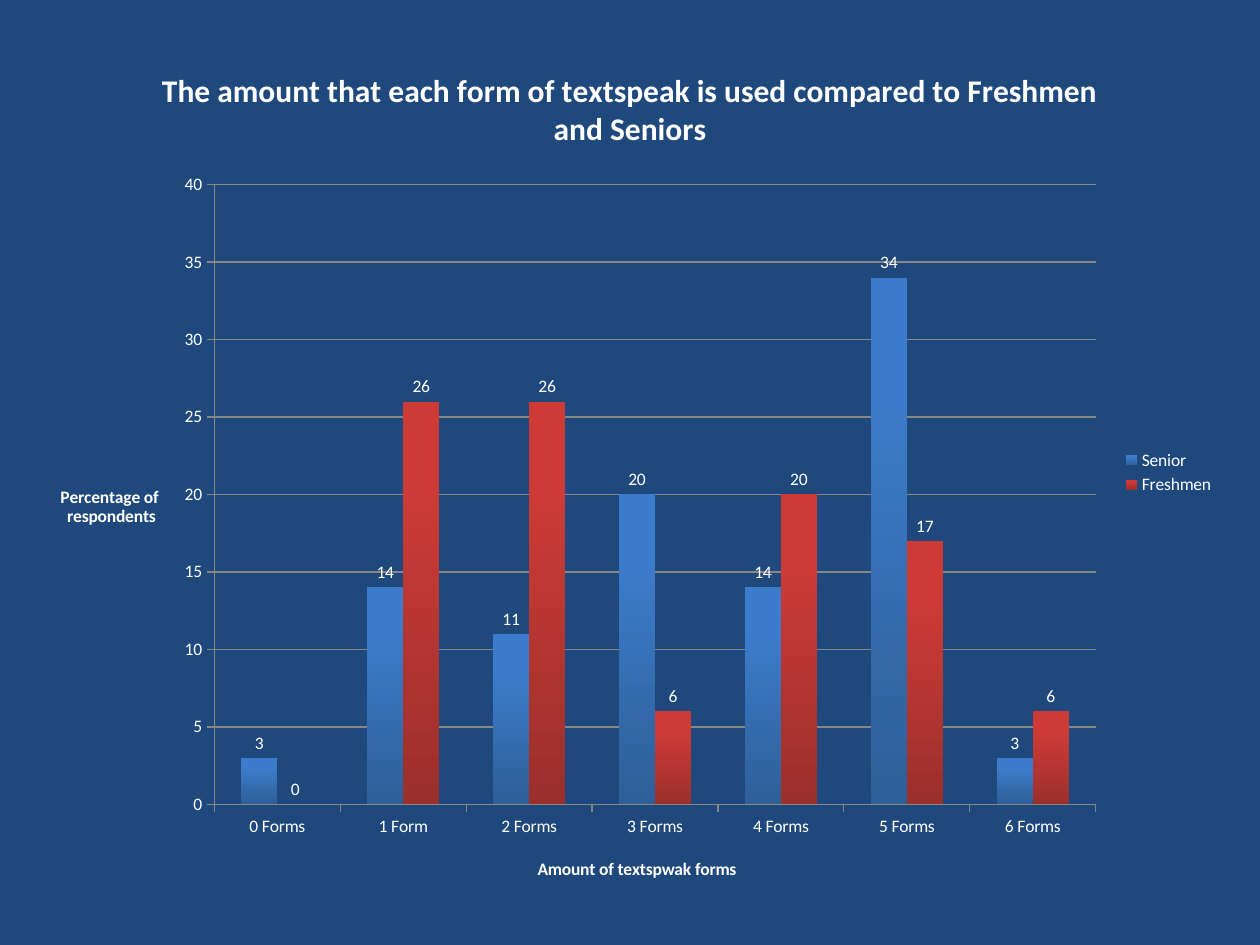
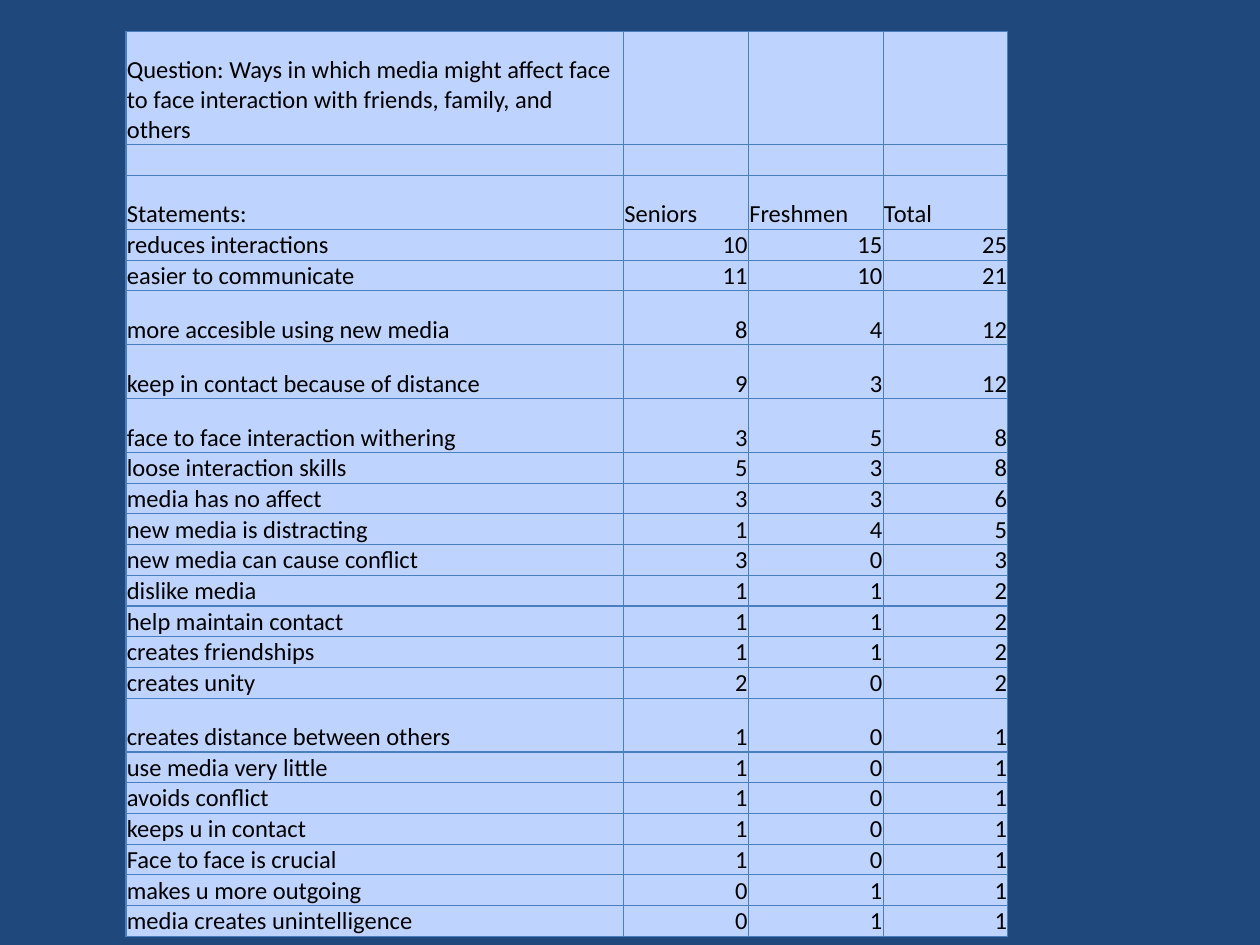
import pptx
import pptx.chart.data
import pptx.dml.color
import pptx.enum.chart
import pptx.enum.text
import pptx.oxml
import pptx.oxml.ns
import pptx.util

Pt = pptx.util.Pt
ALIGN = pptx.enum.text.PP_ALIGN
FONT = "Calibri"
NAVY, WHITE, BLACK = "1F497D", "FFFFFF", "000000"
PALE_BLUE, BORDER, GRID = "BFD3FF", "4B7EBC", "878787"

FORMS = ["0 Forms", "1 Form", "2 Forms", "3 Forms", "4 Forms", "5 Forms", "6 Forms"]
USAGE = [
    ("Senior", (3, 14, 11, 20, 14, 34, 3), "2E5F97", "3D7CCC"),
    ("Freshmen", (0, 26, 26, 6, 20, 17, 6), "9B2F2C", "CE3B37"),
]

QUESTION = ("Question: Ways in which media might affect face to face "
            "interaction with friends, family, and others")
STATEMENTS = [
    ("reduces interactions", 10, 15),
    ("easier to communicate", 11, 10),
    ("more accesible using new media", 8, 4),
    ("keep in contact because of distance", 9, 3),
    ("face to face interaction withering", 3, 5),
    ("loose interaction skills", 5, 3),
    ("media has no affect", 3, 3),
    ("new media is distracting", 1, 4),
    ("new media can cause conflict", 3, 0),
    ("dislike media", 1, 1),
    ("help maintain contact", 1, 1),
    ("creates friendships", 1, 1),
    ("creates unity", 2, 0),
    ("creates distance between others", 1, 0),
    ("use media very little", 1, 0),
    ("avoids conflict", 1, 0),
    ("keeps u in contact", 1, 0),
    ("Face to face is crucial", 1, 0),
    ("makes u more outgoing", 0, 1),
    ("media creates unintelligence", 0, 1),
]
COLUMN_WIDTHS = (284.4, 71.3, 77, 71.3)
QUESTION_HEIGHT, TALL_HEIGHT, LINE_HEIGHT = 64.8, 30.8, 17.5
TALL_ROWS = {2, 5, 6, 7, 16}


def color(value):
    return pptx.dml.color.RGBColor.from_string(value)


def write(frame, text, size=10, bold=False, fill=WHITE, align=None):
    for index, line in enumerate(text.split("\n")):
        paragraph = frame.add_paragraph() if index else frame.paragraphs[0]
        paragraph.alignment = align
        if not line:
            paragraph._p.get_or_add_endParaRPr().set("sz", str(size * 100))
            continue
        run = paragraph.add_run()
        run.text = line
        run.font.name = FONT
        run.font.size = Pt(size)
        run.font.bold = bold
        run.font.color.rgb = color(fill)


def add_slide(deck):
    slide = deck.slides.add_slide(deck.slide_layouts[6])
    slide.background.fill.solid()
    slide.background.fill.fore_color.rgb = color(NAVY)
    return slide


def place(element, inner=False, **fractions):
    for layout in element.findall(pptx.oxml.ns.qn("c:layout")):
        element.remove(layout)
    target = '<c:layoutTarget val="inner"/>' if inner else ""
    modes = "".join(f'<c:{key}Mode val="edge"/>' for key in "xy")
    values = "".join(f'<c:{key} val="{value}"/>' for key, value in fractions.items())
    layout = pptx.oxml.parse_xml(
        f'<c:layout {pptx.oxml.ns.nsdecls("c")}><c:manualLayout>'
        f"{target}{modes}{values}</c:manualLayout></c:layout>")
    text = element.find(pptx.oxml.ns.qn("c:tx"))
    element.insert(0 if text is None else 1, layout)


def style_axis(axis, title, x, y):
    axis.major_tick_mark = pptx.enum.chart.XL_TICK_MARK.OUTSIDE
    axis.minor_tick_mark = pptx.enum.chart.XL_TICK_MARK.NONE
    axis.format.line.color.rgb = color(GRID)
    axis.format.line.width = Pt(0.75)
    write(axis.axis_title.text_frame, title, bold=True, align=ALIGN.CENTER)
    place(axis.axis_title._element, x=x, y=y)


def style_series(series, dark, light):
    fill = series.format.fill
    fill.gradient()
    fill.gradient_angle = 90
    for stop, shade, position in zip(fill.gradient_stops, (dark, light), (0, 0.8)):
        stop.color.rgb = color(shade)
        stop.position = position
    labels = series.data_labels
    labels.show_value = True
    labels.position = pptx.enum.chart.XL_LABEL_POSITION.OUTSIDE_END
    labels.font.size = Pt(10)
    labels.font.name = FONT
    labels.font.color.rgb = color(WHITE)


def add_usage_chart(slide):
    data = pptx.chart.data.CategoryChartData()
    data.categories = FORMS
    for name, values, *_ in USAGE:
        data.add_series(name, values)
    chart = slide.shapes.add_chart(
        pptx.enum.chart.XL_CHART_TYPE.COLUMN_CLUSTERED,
        Pt(18.75), Pt(22.3), Pt(682.5), Pt(495.4), data).chart
    chart.font.name = FONT
    chart.font.size = Pt(10)
    chart.font.color.rgb = color(WHITE)
    write(chart.chart_title.text_frame,
          "The amount that each form of textspeak is used compared to Freshmen and Seniors",
          size=18, bold=True, align=ALIGN.CENTER)
    chart.chart_title.include_text_in_layout = False
    chart.has_legend = True
    chart.legend.position = pptx.enum.chart.XL_LEGEND_POSITION.RIGHT
    chart.legend.include_in_layout = False

    style_axis(chart.category_axis, "Amount of textspwak forms", 0.42, 0.94)
    percentage = chart.value_axis
    style_axis(percentage, "Percentage of\n respondents", 0.02, 0.51)
    percentage.axis_title.text_frame._txBody.bodyPr.set("rot", "0")
    percentage.axis_title.text_frame._txBody.bodyPr.set("vert", "horz")
    percentage.minimum_scale, percentage.maximum_scale = 0, 40
    percentage.major_unit = 5
    percentage.major_gridlines.format.line.color.rgb = color(GRID)
    percentage.major_gridlines.format.line.width = Pt(0.75)

    columns = chart.plots[0]
    columns.gap_width, columns.overlap = 150, 0
    columns.vary_by_categories = False
    for series, (_, _, dark, light) in zip(columns.series, USAGE):
        style_series(series, dark, light)
    plot_area = chart._chartSpace.chart.plotArea
    place(plot_area, inner=True, x=0.152, y=0.168, w=0.738, h=0.715)


def style_cell(cell):
    cell.fill.solid()
    cell.fill.fore_color.rgb = color(PALE_BLUE)
    cell.margin_left = cell.margin_right = cell.margin_top = Pt(0.5)
    cell.margin_bottom = 0
    cell.vertical_anchor = pptx.enum.text.MSO_ANCHOR.BOTTOM
    for index, side in enumerate("LRTB"):
        cell._tc.get_or_add_tcPr().insert(index, pptx.oxml.parse_xml(
            f'<a:ln{side} {pptx.oxml.ns.nsdecls("a")} w="{Pt(0.75)}"><a:solidFill>'
            f'<a:srgbClr val="{BORDER}"/></a:solidFill></a:ln{side}>'))


def add_statement_table(slide):
    rows = [(QUESTION, "", "", ""), ("",) * 4,
            ("Statements:", "Seniors", "Freshmen", "Total")]
    rows += [(statement, seniors, freshmen, seniors + freshmen)
             for statement, seniors, freshmen in STATEMENTS]
    heights = [TALL_HEIGHT if index in TALL_ROWS else LINE_HEIGHT
               for index in range(len(rows))]
    heights[0] = QUESTION_HEIGHT
    table = slide.shapes.add_table(
        len(rows), len(COLUMN_WIDTHS), Pt(72), Pt(18),
        Pt(sum(COLUMN_WIDTHS)), Pt(sum(heights))).table
    table.first_row = table.horz_banding = False
    for column, width in zip(table.columns, COLUMN_WIDTHS):
        column.width = Pt(width)
    for row, height, values in zip(table.rows, heights, rows):
        row.height = Pt(height)
        for cell, value in zip(row.cells, values):
            style_cell(cell)
            align = ALIGN.RIGHT if isinstance(value, int) else ALIGN.LEFT
            write(cell.text_frame, str(value), size=14, fill=BLACK, align=align)


def main():
    deck = pptx.Presentation()
    deck.slide_width, deck.slide_height = Pt(720), Pt(540)
    add_usage_chart(add_slide(deck))
    add_statement_table(add_slide(deck))
    deck.save("out.pptx")


if __name__ == "__main__":
    main()
